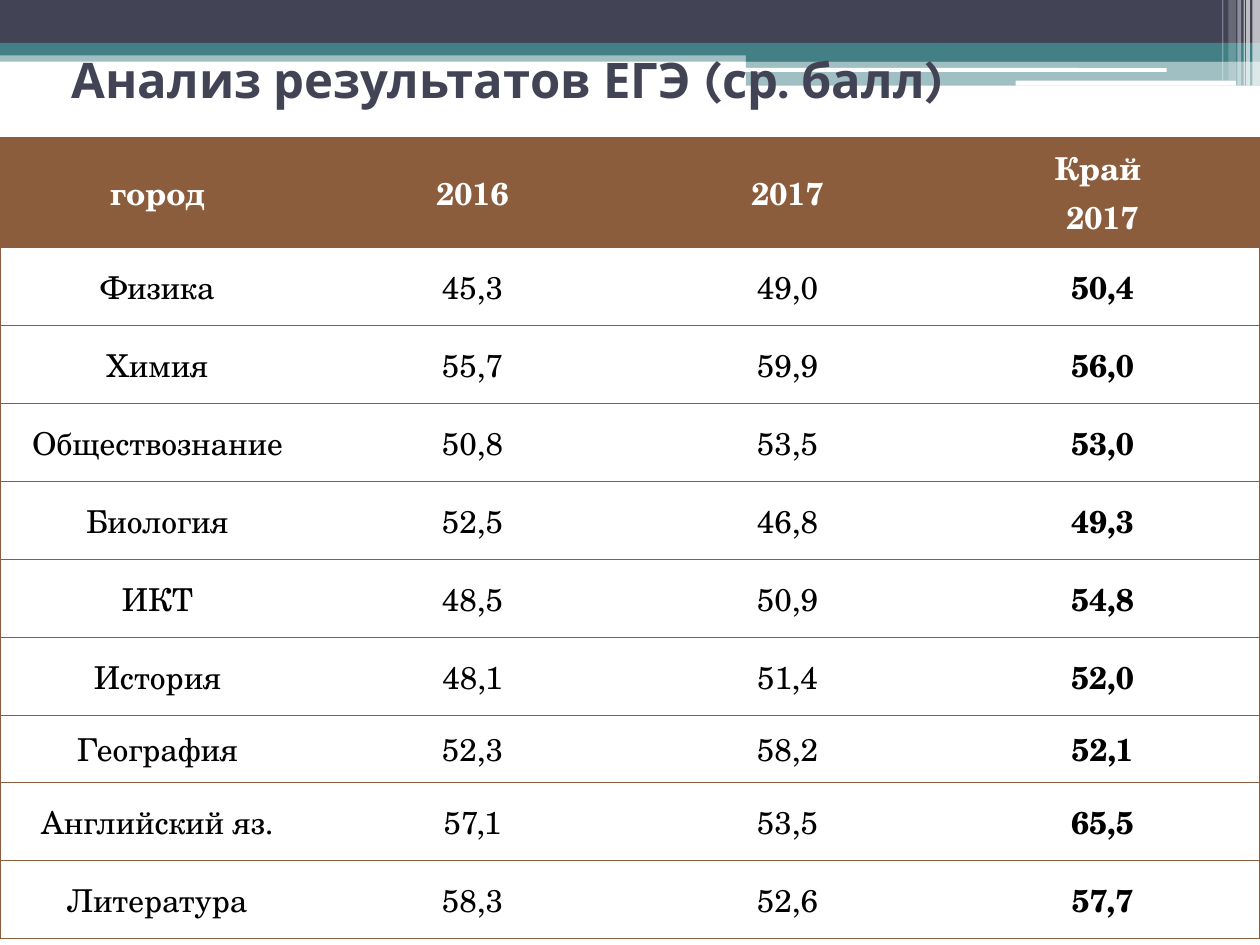
from lxml.etree import SubElement
from pptx import Presentation
from pptx.dml.color import RGBColor
from pptx.enum.shapes import MSO_SHAPE as SHAPE
from pptx.enum.text import MSO_ANCHOR as ANCHOR, PP_ALIGN as ALIGN
from pptx.oxml.ns import qn
from pptx.util import Inches, Pt

NAVY = RGBColor(0x42, 0x44, 0x56)
TEAL = RGBColor(0x43, 0x80, 0x86)
BROWN = RGBColor(0x8B, 0x5D, 0x3D)
WHITE = RGBColor(0xFF, 0xFF, 0xFF)
BLACK = RGBColor(0, 0, 0)
TITLE_FONT, TABLE_FONT = "Karla", "TeX Gyre Schola"

TITLE = "Анализ результатов ЕГЭ (ср. балл)"
SCORES = [
    ("город", "2016", "2017", "Край \n2017"),
    ("Физика", "45,3", "49,0", "50,4"),
    ("Химия", "55,7", "59,9", "56,0"),
    ("Обществознание", "50,8", "53,5", "53,0"),
    ("Биология", "52,5", "46,8", "49,3"),
    ("ИКТ", "48,5", "50,9", "54,8"),
    ("История", "48,1", "51,4", "52,0"),
    ("География", "52,3", "58,2", "52,1"),
    ("Английский яз.", "57,1", "53,5", "65,5"),
    ("Литература", "58,3", "52,6", "57,7"),
]
ROW_HEIGHT = 0.62
SPECIAL_HEIGHTS = {"город": 0.87, "География": 0.53}

# left, top, width, height, colour, opacity in percent
BANDS = [
    (0, 0.4, 10, 0.09, TEAL, 50),
    (0, 0, 10, 0.34, NAVY, 100),
    (0, 0.34, 10, 0.1, TEAL, 100),
    (5.92, 0.39, 4.08, 0.1, TEAL, 100),
    (5.92, 0.48, 4.08, 0.2, TEAL, 50),
]
ROUNDED_BARS = [
    (5.91, 0.54, 3.35, 0.03, WHITE, 100),
    (8.06, 0.64, 1.75, 0.04, WHITE, 100),
]
STRIPES = [
    (9.94, 0, 0.06, 0.68, WHITE, 65),
    (9.89, 0, 0.03, 0.68, WHITE, 65),
    (9.87, 0, 0.01, 0.68, WHITE, 60),
    (9.82, 0, 0.03, 0.68, WHITE, 40),
    (9.75, 0, 0.06, 0.64, WHITE, 20),
    (9.7, 0, 0.01, 0.64, WHITE, 30),
]


def add_bar(s, kind, left, top, width, height, color, opacity):
    sp = s.shapes.add_shape(kind, *map(Inches, (left, top, width, height)))
    sp.shadow.inherit = False
    sp.fill.solid()
    sp.fill.fore_color.rgb = color
    sp.line.fill.background()
    if opacity < 100:
        clr = sp.element.spPr.find(qn("a:solidFill"))[0]
        SubElement(clr, qn("a:alpha"), val=str(opacity * 1000))


def set_borders(cell, visible):
    """Draw the named sides (L, R, T, B) in brown and hide the others."""
    tc_pr = cell._tc.get_or_add_tcPr()
    for side in "LRTB":
        ln = SubElement(tc_pr, qn("a:ln" + side), w=str(Pt(0.75)))
        if side in visible:
            fill = SubElement(ln, qn("a:solidFill"))
            SubElement(fill, qn("a:srgbClr"), val=str(BROWN))
        else:
            SubElement(ln, qn("a:noFill"))


def format_cell(cell, text, header, last_col, borders):
    set_borders(cell, borders)
    if header:
        cell.fill.solid()
        cell.fill.fore_color.rgb = BROWN
    else:
        cell.fill.background()
    cell.vertical_anchor = ANCHOR.MIDDLE
    cell.text_frame.text = text
    for p in cell.text_frame.paragraphs:
        p.alignment = ALIGN.CENTER
        font = p.runs[0].font
        font.name, font.size = TABLE_FONT, Pt(18)
        font.bold = header or last_col
        font.color.rgb = WHITE if header else BLACK


def add_scores(s):
    heights = [SPECIAL_HEIGHTS.get(row[0], ROW_HEIGHT) for row in SCORES]
    n_cols = len(SCORES[0])
    table = s.shapes.add_table(len(SCORES), n_cols, 0, Inches(1.09),
                               Inches(10), Inches(sum(heights))).table
    table.horz_banding = False
    for r, values in enumerate(SCORES):
        table.rows[r].height = Inches(heights[r])
        for c, text in enumerate(values):
            last_col = c == n_cols - 1
            borders = "TB" + "L" * (c == 0) + "R" * last_col
            format_cell(table.cell(r, c), text, r == 0, last_col, borders)


def add_title(s):
    title = s.shapes.title
    title.left, title.top = Inches(0.47), 0
    title.width, title.height = Inches(9), Inches(1.25)
    tf = title.text_frame
    tf.text = TITLE
    tf.vertical_anchor = ANCHOR.MIDDLE
    p = tf.paragraphs[0]
    p.alignment = ALIGN.LEFT
    font = p.runs[0].font
    font.name, font.size, font.bold = TITLE_FONT, Pt(28), True
    font.color.rgb = NAVY
    title.element.getparent().append(title.element)  # bring to front


def main():
    prs = Presentation()
    prs.slide_width, prs.slide_height = Inches(10), Inches(7.5)
    s = prs.slides.add_slide(prs.slide_layouts[5])
    for kind, bars in ((SHAPE.RECTANGLE, BANDS),
                       (SHAPE.ROUNDED_RECTANGLE, ROUNDED_BARS),
                       (SHAPE.RECTANGLE, STRIPES)):
        for bar in bars:
            add_bar(s, kind, *bar)
    add_scores(s)
    add_title(s)
    prs.save("out.pptx")


if __name__ == "__main__":
    main()
